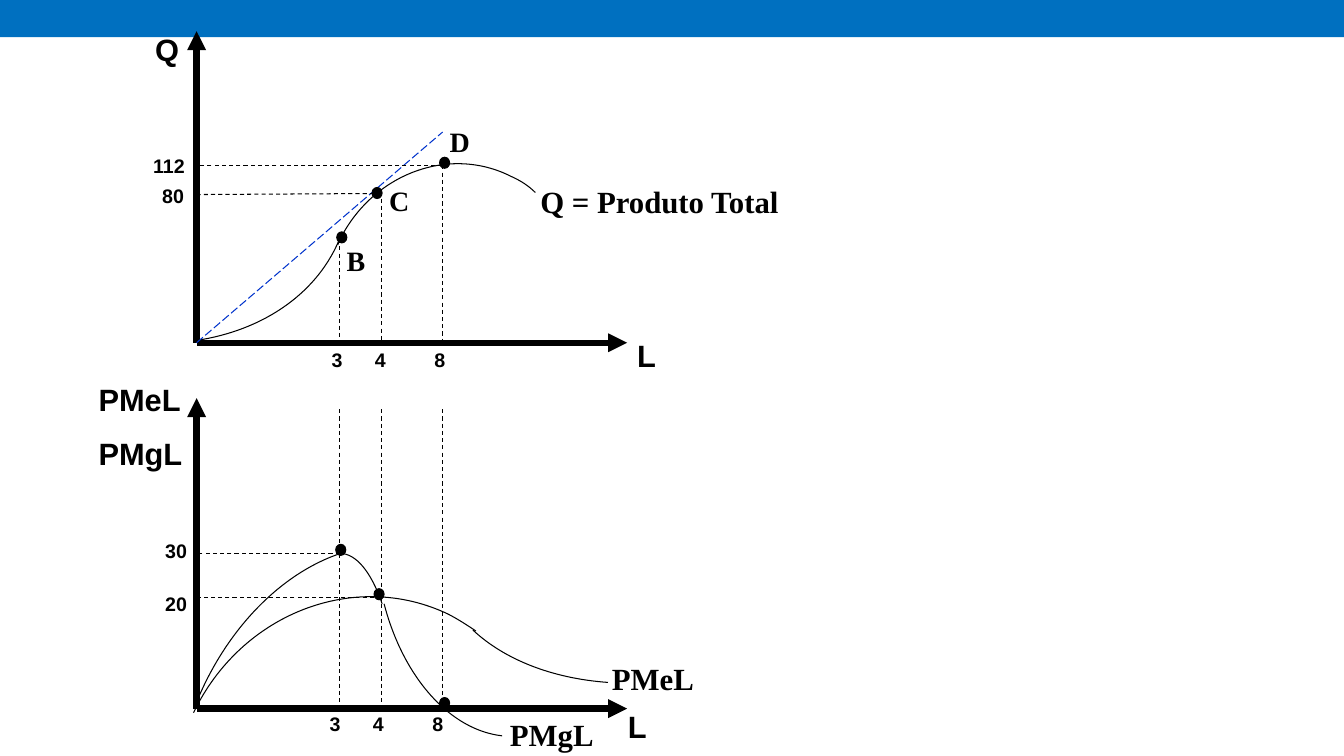
from dataclasses import dataclass

from lxml import etree
from pptx import Presentation
from pptx.dml.color import RGBColor
from pptx.enum.dml import MSO_LINE
from pptx.enum.shapes import MSO_CONNECTOR, MSO_SHAPE
from pptx.oxml.ns import qn
from pptx.util import Emu, Pt

PX = 9144  # 100 px to the inch
STRAIGHT = MSO_CONNECTOR.STRAIGHT
OVAL, RECT = MSO_SHAPE.OVAL, MSO_SHAPE.RECTANGLE
DASH, LONG = MSO_LINE.DASH, MSO_LINE.LONG_DASH


@dataclass(frozen=True)
class Theme:
    ink: str = "000000"
    bar: str = "0070C0"
    ray: str = "0033CC"
    sans: str = "Arial"
    serif: str = "Times New Roman"
    big: int = 22
    mid: int = 20
    small: int = 14
    thin: float = 0.75
    thick: float = 4.5


THEME = Theme()

ORIGIN = 195
TOP, BASE = 340, 703  # heights of the two L axes
LABOUR = (337, 378, 439)  # L = 3, 4, 8

# Each curve: a start point, then three Bezier points per piece
CURVES = (
    ((193, 338), (263, 328), (317, 289), (338, 234)),
    ((335, 243), (336, 241), (336, 240), (337, 238),
     (370, 172), (446, 144), (507, 175),
     (516, 179), (524, 184), (531, 191)),
    ((194, 699), (224, 624), (280, 567), (341, 548)),
    ((337, 549), (353, 549), (368, 567), (379, 599)),
    ((381, 599), (400, 672), (446, 724), (498, 730)),
    ((192, 707), (239, 609), (351, 565), (444, 609),
     (454, 614), (463, 620), (472, 626)),
    ((469, 625), (500, 654), (547, 673), (603, 677)),
)
DOTS = ((369, 186), (334, 230), (436, 156),
        (333, 540), (371, 584), (436, 692))


def px(*values):
    return [Emu(value * PX) for value in values]


def ink(hue):
    return RGBColor.from_string(hue)


def line(slide, start, end, hue=THEME.ink, width=THEME.thin, dash=None,
         arrow=False):
    link = slide.shapes.add_connector(STRAIGHT, *px(*start, *end))
    link.line.color.rgb = ink(hue)
    link.line.width = Pt(width)
    if dash:
        link.line.dash_style = dash
    if arrow:
        stroke = link.line._get_or_add_ln()
        etree.SubElement(stroke, qn("a:tailEnd"), type="triangle")
    etree.SubElement(link._element.spPr, qn("a:effectLst"))


def solid(slide, kind, box, hue, edge=True):
    form = slide.shapes.add_shape(kind, *px(*box))
    form.shadow.inherit = False
    form.fill.solid()
    form.fill.fore_color.rgb = ink(hue)
    if edge:
        form.line.color.rgb = ink(hue)
        form.line.width = Pt(THEME.thin)
    else:
        form.line.fill.background()


def curve(slide, points):
    """Draw an open outline whose points are Bezier controls."""
    pen = slide.shapes.build_freeform(*points[0], scale=PX)
    pen.add_line_segments(points[1:], close=False)
    form = pen.convert_to_shape()
    form.shadow.inherit = False
    form.fill.background()
    form.line.color.rgb = ink(THEME.ink)
    form.line.width = Pt(THEME.thin)
    trace = form._element.find(".//" + qn("a:path"))
    steps = trace.findall(qn("a:lnTo"))
    for i in range(0, len(steps), 3):
        bend = etree.SubElement(trace, qn("a:cubicBezTo"))
        for step in steps[i:i + 3]:
            bend.append(step[0])
            trace.remove(step)


def text(slide, words, box, size=THEME.small, face=THEME.sans, tabs=()):
    frame = slide.shapes.add_textbox(*px(*box)).text_frame
    frame.word_wrap = True
    for i, row in enumerate(words.split("\n")):
        para = frame.add_paragraph() if i else frame.paragraphs[0]
        if i:
            para.space_before = Pt(12)
        if tabs:
            stops = etree.SubElement(para._p.get_or_add_pPr(), qn("a:tabLst"))
            for stop in tabs:
                etree.SubElement(stops, qn("a:tab"), pos=str(stop * PX),
                                 algn="l")
        run = para.add_run()
        run.text = row
        run.font.name = face
        run.font.size = Pt(size)
        run.font.bold = True
        run.font.color.rgb = ink(THEME.ink)


def axes(slide, base, peak):
    for end in ((ORIGIN, peak), (622, base)):
        line(slide, (ORIGIN, base), end, width=THEME.thick, arrow=True)


def guides(slide):
    for x, high in zip(LABOUR, (230, 197, 164)):
        line(slide, (x, high), (x, TOP), dash=DASH)
        line(slide, (x, 406), (x, BASE), dash=DASH)
    for x, y in ((439, 164), (337, 549), (378, 593)):
        line(slide, (x, y), (ORIGIN, y), dash=DASH)
    line(slide, (371, 192), (198, 193), dash=DASH)


def labels(slide):
    for words, box in (("Q", (144, 26, 61, 47)),
                       ("L", (622, 329, 61, 47)),
                       ("L", (613, 697, 72, 47)),
                       ("PMeL\nPMgL", (88, 373, 107, 103))):
        text(slide, words, box, size=THEME.big)
    for words, box in (("112", (142, 148, 65, 44)),
                       ("80", (151, 178, 65, 34)),
                       ("30", (154, 530, 54, 44)),
                       ("20", (154, 582, 54, 44))):
        text(slide, words, box)
    for left, top in ((319, 340), (317, 701)):
        text(slide, "3\t4\t8", (left, top, 183, 34), tabs=(43, 102))
    for words, left, top in (("B", 334, 237), ("D", 436, 119),
                             ("C", 376, 177)):
        text(slide, words, (left, top, 41, 44), size=THEME.mid,
             face=THEME.serif)
    for words, box in (("Q = Produto Total", (526, 176, 281, 47)),
                       ("PMgL", (496, 705, 110, 45)),
                       ("PMeL", (597, 650, 105, 47))):
        text(slide, words, box, size=THEME.big, face=THEME.serif)


def main():
    deck = Presentation()
    deck.slide_width, deck.slide_height = px(1333, 750)
    slide = deck.slides.add_slide(deck.slide_layouts[6])
    solid(slide, RECT, (0, 0, 1333, 37), THEME.bar, edge=False)
    axes(slide, TOP, 31)
    axes(slide, BASE, 395)
    for points in CURVES:
        curve(slide, points)
    line(slide, (ORIGIN, TOP), (439, 131), hue=THEME.ray, dash=LONG)
    guides(slide)
    for left, top in DOTS:
        solid(slide, OVAL, (left, top, 10, 11), THEME.ink)
    labels(slide)
    deck.save("out.pptx")


if __name__ == "__main__":
    main()
